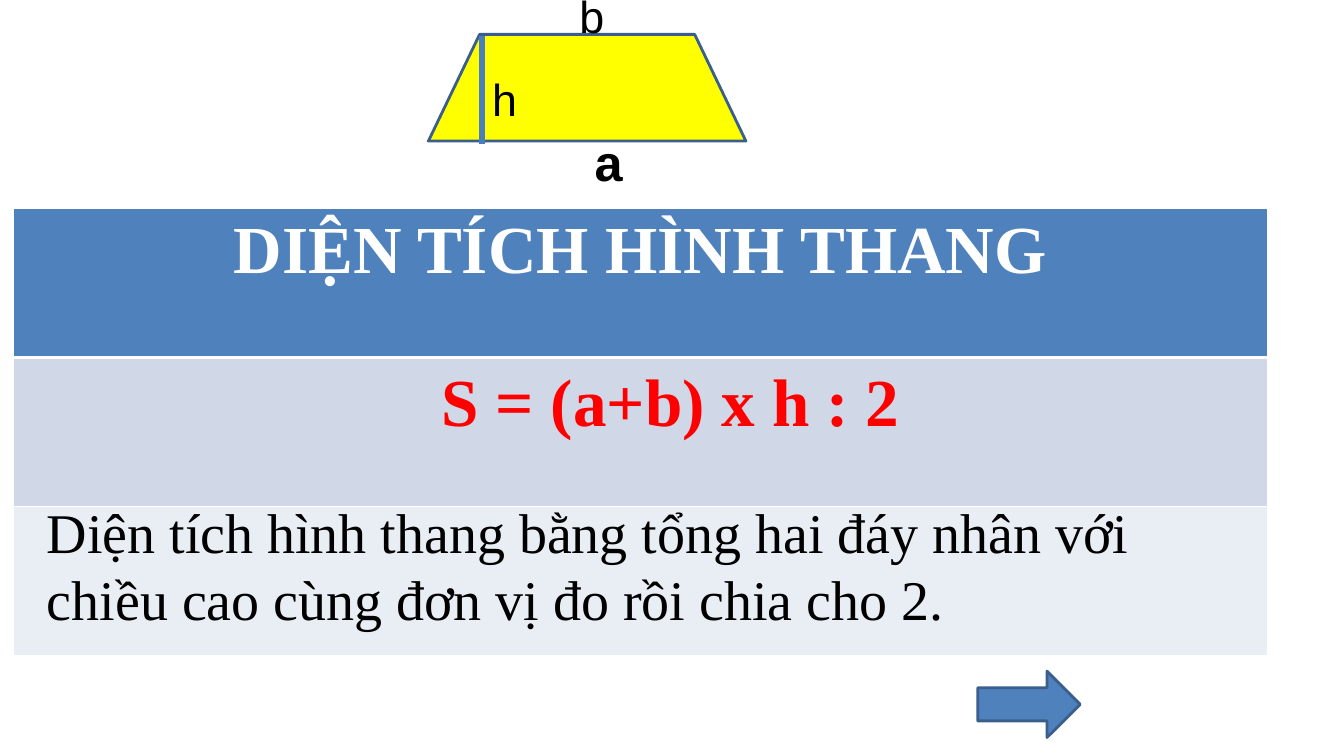
import pptx
import pptx.dml.color
import pptx.enum.shapes
import pptx.enum.text
import pptx.oxml
import pptx.oxml.ns
import pptx.util

RGBColor = pptx.dml.color.RGBColor
SHAPES = pptx.enum.shapes.MSO_SHAPE
CENTER = pptx.enum.text.PP_ALIGN.CENTER

WHITE = RGBColor(0xFF, 0xFF, 0xFF)
BLACK = RGBColor(0x00, 0x00, 0x00)
RED = RGBColor(0xFF, 0x00, 0x00)
YELLOW = RGBColor(0xFF, 0xFF, 0x00)
BLUE = RGBColor(0x4F, 0x81, 0xBD)
OUTLINE_BLUE = RGBColor(0x3A, 0x5F, 0x8C)
HEIGHT_BLUE = RGBColor(0x4B, 0x7E, 0xBC)
BAND_DARK = RGBColor(0xD0, 0xD8, 0xE8)
BAND_LIGHT = RGBColor(0xE9, 0xED, 0xF4)

SLIDE_WIDTH = pptx.util.Inches(13.33)
SLIDE_HEIGHT = pptx.util.Inches(7.5)
COLUMN = SLIDE_WIDTH / 16
ROW = SLIDE_HEIGHT / 9

SANS = "Arial"
SERIF = "Times New Roman"
TITLE = dict(name=SERIF, size=pptx.util.Pt(48), bold=True, color=WHITE)
FORMULA = dict(TITLE, color=RED)
RULE = dict(name=SERIF, size=pptx.util.Pt(40), color=BLACK)
SIDE = dict(name=SANS, size=pptx.util.Pt(32), color=BLACK)
BASE = dict(name=SANS, size=pptx.util.Pt(36), bold=True, color=BLACK)


def grid(*lengths):
    """Turn alternating column and row counts into slide lengths."""
    return [round(length * (ROW if index % 2 else COLUMN))
            for index, length in enumerate(lengths)]


def write(paragraph, text, style):
    run = paragraph.add_run()
    run.text = text
    for name, value in style.items():
        if name == "color":
            run.font.color.rgb = value
        else:
            setattr(run.font, name, value)


def add_label(slide, place, text, style, wrap=True):
    frame = slide.shapes.add_textbox(*grid(*place)).text_frame
    frame.word_wrap = wrap
    frame.auto_size = pptx.enum.text.MSO_AUTO_SIZE.SHAPE_TO_FIT_TEXT
    write(frame.paragraphs[0], text, style)


def add_figure(slide, kind, place, fill):
    shape = slide.shapes.add_shape(kind, *grid(*place))
    shape.shadow.inherit = False
    shape.fill.solid()
    shape.fill.fore_color.rgb = fill
    shape.line.color.rgb = OUTLINE_BLUE
    shape.line.width = pptx.util.Pt(2)
    return shape


def add_height_line(slide, ends):
    line = slide.shapes.add_connector(
        pptx.enum.shapes.MSO_CONNECTOR.STRAIGHT, *grid(*ends))
    line.line.color.rgb = HEIGHT_BLUE
    line.line.width = pptx.util.Pt(4.5)
    properties = line._element.spPr
    properties.append(properties.makeelement(pptx.oxml.ns.qn("a:effectLst"), {}))


def set_borders(cell, top, bottom):
    """Draw white cell borders, one point wide at the sides."""
    properties = cell._tc.get_or_add_tcPr()
    widths = {"lnL": 1, "lnR": 1, "lnT": top, "lnB": bottom}
    for index, (side, width) in enumerate(widths.items()):
        properties.insert(index, pptx.oxml.parse_xml(
            f'<a:{side} {pptx.oxml.ns.nsdecls("a")} w="{pptx.util.Pt(width)}">'
            f'<a:solidFill><a:srgbClr val="{WHITE}"/></a:solidFill></a:{side}>'))


def add_lesson_table(slide, place, heading):
    fills = [BLUE, BAND_DARK, BAND_LIGHT]
    edges = [1, 3, 1, 1]
    table = slide.shapes.add_table(len(fills), 1, *grid(*place)).table
    for index, fill in enumerate(fills):
        cell = table.cell(index, 0)
        cell.fill.solid()
        cell.fill.fore_color.rgb = fill
        set_borders(cell, edges[index], edges[index + 1])
    paragraph = table.cell(0, 0).text_frame.paragraphs[0]
    paragraph.alignment = CENTER
    write(paragraph, heading, TITLE)


def main():
    presentation = pptx.Presentation()
    presentation.slide_width = SLIDE_WIDTH
    presentation.slide_height = SLIDE_HEIGHT
    slide = presentation.slides.add_slide(presentation.slide_layouts[6])

    add_lesson_table(slide, (0.16, 2.48, 14.93, 5.33), "DIỆN TÍCH HÌNH THANG")
    trapezoid = add_figure(slide, SHAPES.TRAPEZOID, (5.1, 0.41, 3.78, 1.27), YELLOW)
    trapezoid.adjustments[0] = 0.48
    add_label(slide, (6.96, 1.5, 0.77, 0.85), "a", BASE)
    add_label(slide, (6.78, -0.19, 0.41, 0.77), "b", SIDE)
    add_label(slide, (5.74, 0.79, 0.85, 0.77), "h", SIDE)
    add_height_line(slide, (5.74, 0.43, 5.74, 1.72))
    add_label(slide, (5.14, 4.22, 5.75, 1.09), "S = (a+b) x h : 2", FORMULA, wrap=False)
    add_label(slide, (0.44, 5.86, 14.56, 1.74),
              "Diện tích hình thang bằng tổng hai đáy nhân với "
              "chiều cao cùng đơn vị đo rồi chia cho 2.", RULE)
    add_figure(slide, SHAPES.RIGHT_ARROW, (11.64, 7.99, 1.22, 0.79), BLUE)

    presentation.save("out.pptx")


if __name__ == "__main__":
    main()
